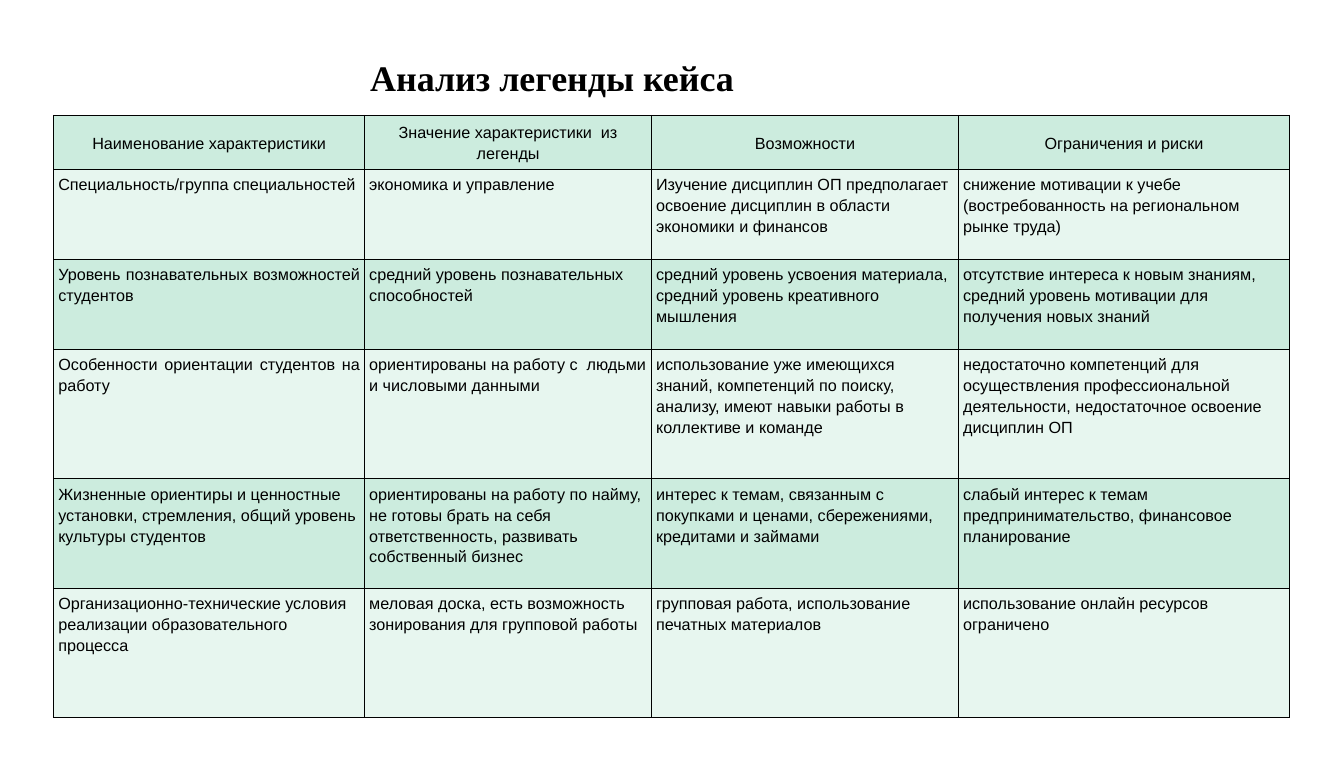
from lxml import etree
from pptx import Presentation
from pptx.dml.color import RGBColor
from pptx.enum.text import MSO_ANCHOR, MSO_AUTO_SIZE, PP_ALIGN
from pptx.oxml.ns import qn
from pptx.util import Inches, Pt

CENTER, LEFT, JUSTIFY = PP_ALIGN.CENTER, PP_ALIGN.LEFT, PP_ALIGN.JUSTIFY
TOP, MIDDLE = MSO_ANCHOR.TOP, MSO_ANCHOR.MIDDLE
GROW = MSO_AUTO_SIZE.SHAPE_TO_FIT_TEXT

WIDTH, HEIGHT = 20.75, 11.69
INK, DARK, LIGHT = "000000", "CCECDE", "E7F6EF"
COLS = [4.8, 4.43, 4.74, 5.11]
ROWS = [0.78, 1.39, 1.39, 2, 1.69, 2]
PAD = 0.07
LAST_JUST = 3  # first-column cells are justified down to this row

CELLS = [
    ["Наименование характеристики",
     "Значение характеристики  из легенды",
     "Возможности",
     "Ограничения и риски"],
    ["Специальность/группа специальностей",
     "экономика и управление",
     "Изучение дисциплин ОП предполагает освоение дисциплин в области экономики и финансов",
     "снижение мотивации к учебе  (востребованность на региональном рынке труда)"],
    ["Уровень познавательных возможностей студентов",
     "средний уровень познавательных способностей",
     "средний уровень усвоения материала,  средний уровень креативного мышления",
     "отсутствие интереса к новым знаниям, средний уровень мотивации для получения новых знаний"],
    ["Особенности ориентации студентов на работу",
     "ориентированы на работу с  людьми и числовыми данными",
     "использование уже имеющихся знаний, компетенций по поиску, анализу, "
     "имеют навыки работы в коллективе и команде",
     "недостаточно компетенций для осуществления профессиональной деятельности, "
     "недостаточное освоение дисциплин ОП"],
    ["Жизненные ориентиры и ценностные установки, стремления, общий уровень культуры студентов",
     "ориентированы на работу по найму, не готовы брать на себя ответственность, "
     "развивать собственный бизнес",
     "интерес к темам, связанным с покупками и ценами, сбережениями, кредитами и займами",
     "слабый интерес к темам предпринимательство, финансовое планирование"],
    ["Организационно-технические условия реализации образовательного процесса",
     "меловая доска, есть возможность зонирования для групповой работы",
     "групповая работа, использование печатных материалов",
     "использование онлайн ресурсов ограничено"],
]


def paint(color, hue):
    color.rgb = RGBColor.from_string(hue)


def write(frame, text, size=18, font="Arial", bold=False, align=LEFT):
    para = frame.paragraphs[0]
    para.alignment = align
    para.line_spacing = 1.15
    run = para.add_run()
    run.text = text
    run.font.size, run.font.name, run.font.bold = Pt(size), font, bold
    paint(run.font.color, INK)


def border(cell, hue=INK, width=1):
    props = cell._tc.get_or_add_tcPr()
    for side in ("lnL", "lnR", "lnT", "lnB"):
        line = etree.SubElement(props, qn(f"a:{side}"), w=str(Pt(width)))
        fill = etree.SubElement(line, qn("a:solidFill"))
        etree.SubElement(fill, qn("a:srgbClr"), val=hue)


def add_title(slide, box):
    frame = slide.shapes.add_textbox(*map(Inches, box)).text_frame
    frame.word_wrap = False
    frame.auto_size = GROW
    write(frame, "Анализ легенды кейса", size=40,
          font="Times New Roman", bold=True, align=CENTER)


def add_grid(slide, left, top):
    box = (left, top, sum(COLS), sum(ROWS))
    table = slide.shapes.add_table(
        len(ROWS), len(COLS), *map(Inches, box)).table
    for col, width in zip(table.columns, COLS):
        col.width = Inches(width)
    for row, height in zip(table.rows, ROWS):
        row.height = Inches(height)
    for r, texts in enumerate(CELLS):
        for c, text in enumerate(texts):
            cell = table.cell(r, c)
            cell.margin_left = cell.margin_right = Inches(PAD)
            cell.margin_top = cell.margin_bottom = Inches(PAD)
            cell.vertical_anchor = TOP if r else MIDDLE
            # Borders come before the fill in the cell properties
            border(cell)
            cell.fill.solid()
            paint(cell.fill.fore_color, LIGHT if r % 2 else DARK)
            side = JUSTIFY if c == 0 and r <= LAST_JUST else LEFT
            write(cell.text_frame, text, align=side if r else CENTER)


def main():
    deck = Presentation()
    deck.slide_width, deck.slide_height = Inches(WIDTH), Inches(HEIGHT)
    slide = deck.slides.add_slide(deck.slide_layouts[6])
    # Heading
    add_title(slide, (5.58, 0.71, 5.89, 0.83))
    # Case analysis table
    add_grid(slide, 0.04 * WIDTH, 1.78)
    deck.save("out.pptx")


if __name__ == "__main__":
    main()
